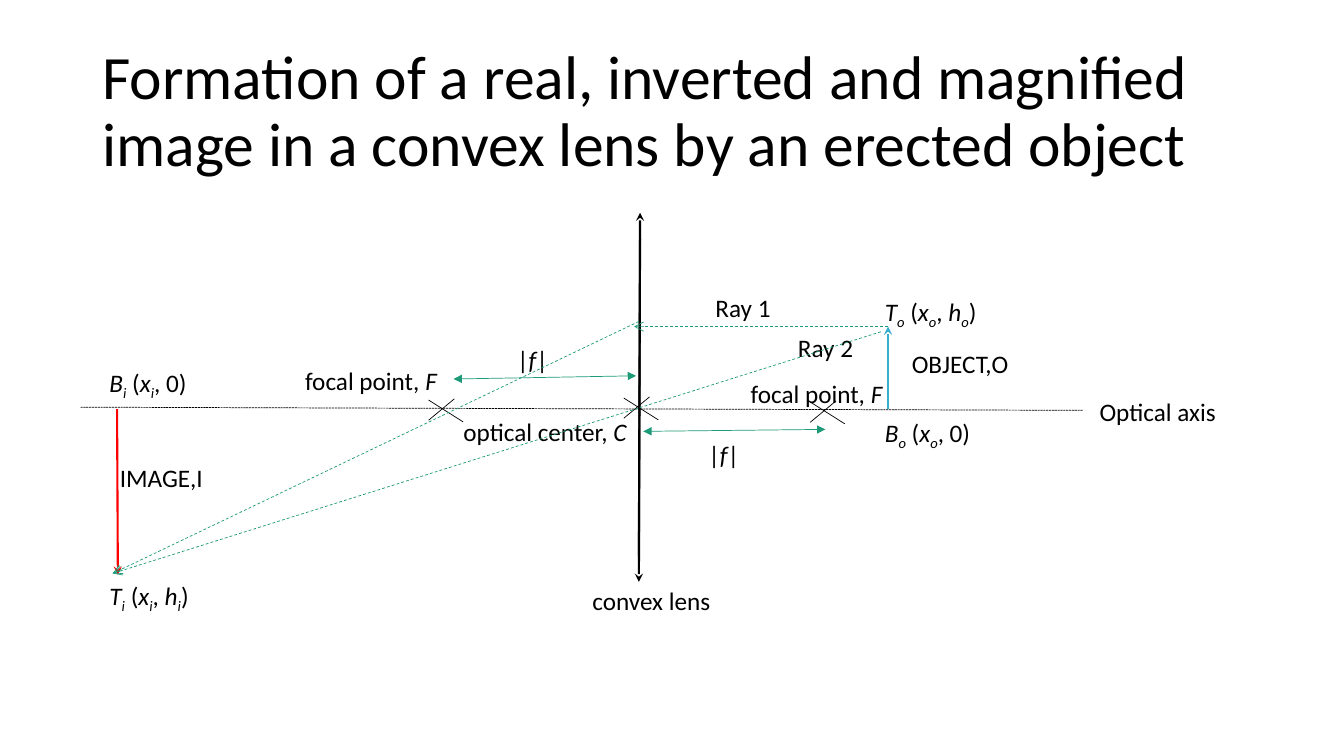
from lxml.etree import SubElement
from pptx import Presentation
from pptx.dml.color import RGBColor
from pptx.enum.dml import MSO_LINE
from pptx.enum.shapes import MSO_CONNECTOR
from pptx.enum.text import MSO_ANCHOR, MSO_AUTO_SIZE
from pptx.oxml.ns import qn
from pptx.util import Cm, Pt

BLACK, GREEN, BLUE, RED = "000000", "1D9A78", "36AFCE", "FF0000"
PLAIN, ITALIC, SUBSCRIPT = "plain", "italic", "subscript"
FOCAL_LENGTH = [("|", PLAIN), ("f", ITALIC), ("|", PLAIN)]
FOCAL_POINT = [("focal point, ", PLAIN), ("F", ITALIC)]


def color(hex_value):
    return RGBColor.from_string(hex_value)


def add_text(slide, left, top, width, height, runs, size=18):
    """Add a text box whose runs are (text, style) pairs."""
    box = slide.shapes.add_textbox(Cm(left), Cm(top), Cm(width), Cm(height))
    frame = box.text_frame
    frame.word_wrap = True
    paragraph = frame.paragraphs[0]
    paragraph.font.name = "Calibri"
    paragraph.font.size = Pt(size)
    paragraph.font.color.rgb = color(BLACK)
    for text, style in runs:
        run = paragraph.add_run()
        run.text = text
        if style != PLAIN:
            run.font.italic = True
        if style == SUBSCRIPT:
            run.font._element.set("baseline", "-25000")
    return frame


def add_title(slide, text):
    frame = add_text(slide, 2.33, 1.01, 29.21, 3.68, [(text, PLAIN)], size=44)
    frame.vertical_anchor = MSO_ANCHOR.MIDDLE
    frame.paragraphs[0].line_spacing = 0.9


def add_label(slide, left, top, runs):
    if isinstance(runs, str):
        runs = [(runs, PLAIN)]
    frame = add_text(slide, left, top, 4.7, 1.07, runs)
    frame.auto_size = MSO_AUTO_SIZE.SHAPE_TO_FIT_TEXT


def point_runs(point, index, has_height):
    """Runs for a point on the axis, or at height h above or below it."""
    runs = [(point, ITALIC), (index, SUBSCRIPT), (" (", PLAIN),
            ("x", ITALIC), (index, SUBSCRIPT)]
    if has_height:
        return runs + [(",", PLAIN), (" h", ITALIC), (index, SUBSCRIPT), (")", PLAIN)]
    return runs + [(", 0)", PLAIN)]


def add_line(slide, start, end, hex_value=BLACK, width=0.5, dash=None, head=None, tail=None):
    """Draw a line; head is the arrowhead at start, tail the one at end."""
    connector = slide.shapes.add_connector(
        MSO_CONNECTOR.STRAIGHT, *map(Cm, start), *map(Cm, end))
    connector.line.color.rgb = color(hex_value)
    connector.line.width = Pt(width)
    if dash:
        connector.line.dash_style = dash
    outline = connector.line._get_or_add_ln()
    for tag, arrow in (("a:headEnd", head), ("a:tailEnd", tail)):
        if arrow:
            SubElement(outline, qn(tag)).set("type", arrow)
    SubElement(connector._element.spPr, qn("a:effectLst"))


def add_cross(slide, left, top):
    add_line(slide, (left, top + 0.51), (left + 0.65, top - 0.03))
    add_line(slide, (left, top), (left + 0.87, top + 0.55))


def add_labels(slide):
    labels = [
        (27.46, 9.86, "Optical axis"),
        (14.68, 14.63, "convex lens"),
        (11.43, 10.36, [("optical center, ", PLAIN), ("C", ITALIC)]),
        (17.78, 7.24, "Ray 1"),
        (19.86, 8.26, "Ray 2"),
        (7.44, 9.09, FOCAL_POINT),
        (18.67, 9.4, FOCAL_POINT),
        (12.78, 8.56, FOCAL_LENGTH),
        (17.6, 10.95, FOCAL_LENGTH),
        (22.05, 7.34, point_runs("T", "o", True)),
        (22.05, 10.39, point_runs("B", "o", False)),
        (2.51, 14.5, point_runs("T", "i", True)),
        (2.51, 9.12, point_runs("B", "i", False)),
        (22.73, 8.66, "OBJECT,O"),
        (2.77, 11.53, "IMAGE,I"),
    ]
    for left, top, runs in labels:
        add_label(slide, left, top, runs)


def add_lens_and_axis(slide):
    add_line(slide, (2.03, 10.26), (27.28, 10.34), dash=MSO_LINE.SQUARE_DOT)
    add_line(slide, (16.13, 6.02), (16.1, 14.66), width=1.5, tail="stealth")
    add_line(slide, (16.1, 14.02), (16.13, 5.36), width=1.5, tail="stealth")
    for left, top in ((10.8, 10.08), (15.72, 10.03), (20.42, 10.13)):
        add_cross(slide, left, top)
    for start, end in (((11.43, 9.55), (16.03, 9.47)), ((16.21, 10.87), (20.8, 10.82))):
        add_line(slide, start, end, GREEN, head="triangle", tail="triangle")


def add_object_and_image(slide):
    add_line(slide, (22.38, 10.31), (22.38, 8.23), BLUE, 1.5, tail="stealth")
    add_line(slide, (2.95, 10.31), (2.97, 14.48), RED, 1.5, tail="stealth")


def add_rays(slide):
    image_tip = (2.84, 14.45)
    rays = [
        ((22.38, 8.23), (15.98, 8.23)),
        ((16.1, 8.1), image_tip),
        ((22.2, 8.36), image_tip),
    ]
    for start, end in rays:
        add_line(slide, start, end, GREEN, dash=MSO_LINE.DASH, tail="arrow")


def main():
    presentation = Presentation()
    presentation.slide_width, presentation.slide_height = Cm(33.87), Cm(19.05)
    slide = presentation.slides.add_slide(presentation.slide_layouts[6])
    add_title(slide, "Formation of a real, inverted and magnified image "
                     "in a convex lens by an erected object")
    add_labels(slide)
    add_lens_and_axis(slide)
    add_object_and_image(slide)
    add_rays(slide)
    presentation.save("out.pptx")


if __name__ == "__main__":
    main()
